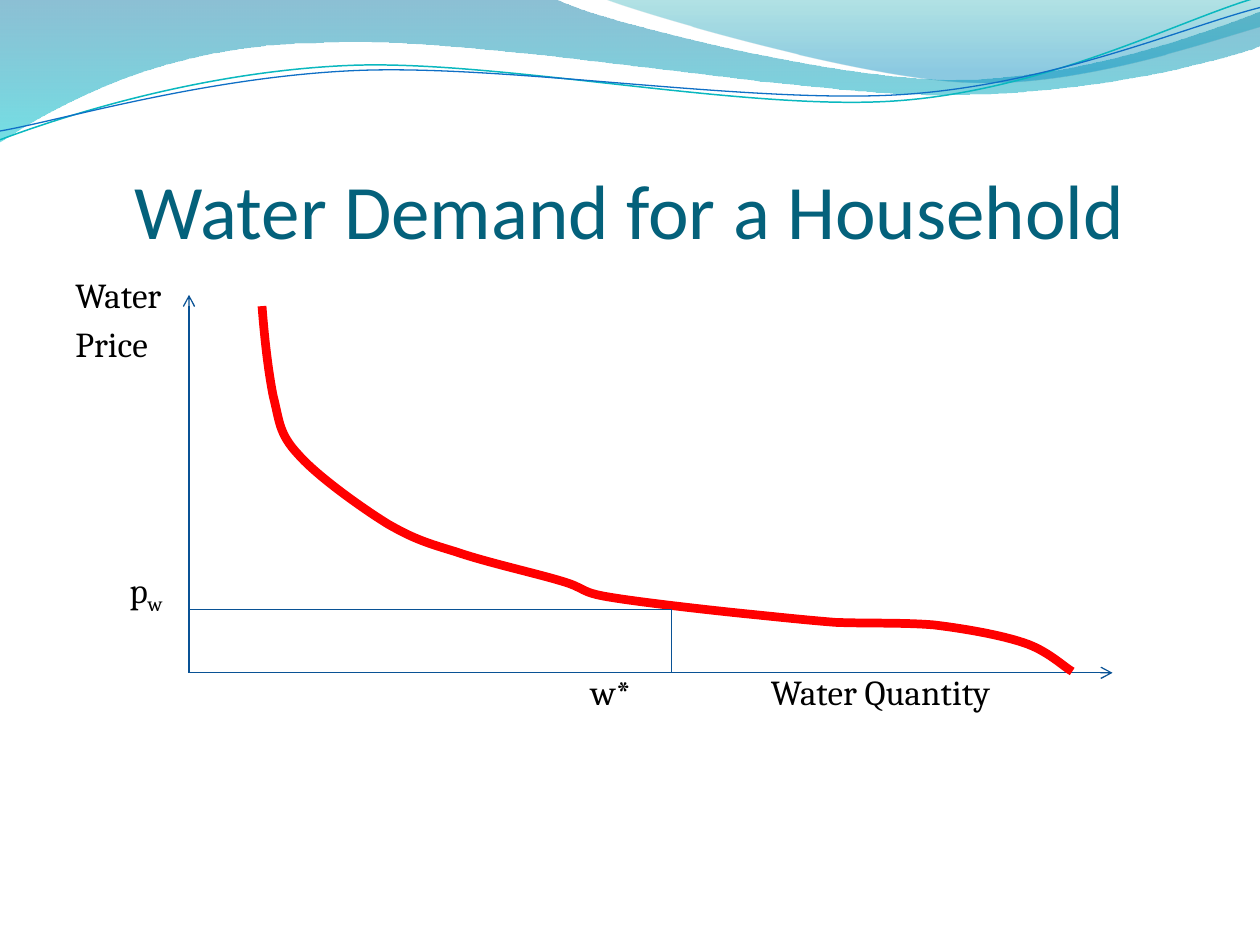
from dataclasses import dataclass

from lxml.etree import SubElement as Sub
from pptx import Presentation
from pptx.dml.color import RGBColor as RGB
from pptx.enum.shapes import MSO_CONNECTOR as CONN
from pptx.enum.text import MSO_ANCHOR as ANCHOR, PP_ALIGN as ALIGN
from pptx.oxml.ns import qn
from pptx.util import Cm, Pt


@dataclass(frozen=True)
class Theme:
    title: str = "04617B"
    text: str = "000000"
    axis: str = "095295"
    demand: str = "FF0000"
    teal_line: str = "0AB8BF"
    blue_line: str = "0F6FC6"
    wave: tuple = ((0, "0074A1", 45), (1, "00C6CF", 55))
    crest: tuple = ((0, "00A1A9", 30), (0.8, "008BBF", 45))
    title_font: str = "Calibri"
    body_font: str = "Cambria"
    title_size: int = 44
    body_size: int = 20
    thin: float = 0.75
    thick: float = 5


def inch(value):
    return Cm(value * 2.54)


class Deck:
    def __init__(self, theme):
        self.theme = theme
        self.prs = Presentation()
        self.prs.slide_width, self.prs.slide_height = Cm(25.4), Cm(19.05)
        self.s = self.prs.slides.add_slide(self.prs.slide_layouts[6])

    def text(self, box, paragraphs, title=False):
        t = self.theme
        tf = self.s.shapes.add_textbox(*map(inch, box)).text_frame
        tf.word_wrap = True
        if title:
            tf.vertical_anchor = ANCHOR.BOTTOM
            tf.margin_left = tf.margin_right = tf.margin_bottom = 0
        for i, runs in enumerate(paragraphs):
            p = tf.add_paragraph() if i else tf.paragraphs[0]
            p.alignment = ALIGN.CENTER if title else ALIGN.LEFT
            if i:
                p.space_before = Pt(t.body_size * 0.2)
            for content, baseline in runs:
                r = p.add_run()
                r.text = content
                r.font.name = t.title_font if title else t.body_font
                r.font.size = Pt(t.title_size if title else t.body_size)
                r.font.color.rgb = RGB.from_string(t.title if title else t.text)
                if baseline:
                    r.font._element.set("baseline", str(baseline * 1000))

    def outline(self, start, segments, closed=False):
        points = [(inch(x), inch(y)) for seg in segments for x, y in zip(seg[::2], seg[1::2])]
        builder = self.s.shapes.build_freeform(*map(inch, start))
        builder.add_line_segments(points, close=closed)
        sp = builder.convert_to_shape()
        sp.shadow.inherit = False
        steps = iter(list(sp._element.iter(qn("a:lnTo"))))
        for seg in segments:
            if len(seg) == 2:
                next(steps)
                continue
            curve = next(steps)
            curve.tag = qn("a:cubicBezTo")
            for _ in range(2):
                step = next(steps)
                curve.append(step[0])
                step.getparent().remove(step)
        return sp

    def curve(self, start, segments, color, width):
        sp = self.outline(start, segments)
        sp.fill.background()
        sp.line.color.rgb = RGB.from_string(color)
        sp.line.width = Pt(width)

    def wave(self, start, segments, stops):
        sp = self.outline(start, segments, closed=True)
        sp.line.fill.background()
        sp.fill.gradient()
        sp.fill.gradient_angle = 270
        for stop, (position, color, opacity) in zip(sp.fill.gradient_stops, stops):
            stop.position = position
            stop.color.rgb = RGB.from_string(color)
            clr = stop._gs.find(qn("a:srgbClr"))
            Sub(clr, qn("a:alpha"), val=str(opacity * 1000))

    def line(self, start, end, arrow=False):
        c = self.s.shapes.add_connector(CONN.STRAIGHT, *map(inch, start + end))
        c.line.color.rgb = RGB.from_string(self.theme.axis)
        c.line.width = Pt(self.theme.thin)
        if arrow:
            Sub(c.line._get_or_add_ln(), qn("a:tailEnd"), type="arrow")
        Sub(c._element.spPr, qn("a:effectLst"))


def draw_header(deck):
    t = deck.theme
    deck.wave((0, -0.01), [
        (4.4, -0.01),
        (4.76, 0.17, 6.64, 0.63, 7.58, 0.63),
        (8.53, 0.63, 9.58, 0.26, 10, 0.09),
        (10.01, 0.36),
        (9.83, 0.44, 8.7, 0.76, 7.46, 0.75),
        (6.22, 0.75, 3.82, 0.28, 2.57, 0.34),
        (1.29, 0.35, 0.46, 0.83, -0.01, 1.13),
    ], t.wave)
    deck.wave((4.79, -0.01), [
        (5.09, 0.11, 6.82, 0.62, 7.69, 0.65),
        (8.56, 0.69, 9.61, 0.32, 10, 0.21),
        (10, 0),
    ], t.crest)
    deck.curve((0, 1.11), [
        (0.48, 0.93, 1.58, 0.57, 2.77, 0.52),
        (3.95, 0.47, 5.93, 0.89, 7.13, 0.8),
        (8.33, 0.71, 9.38, 0.15, 9.98, -0.02),
    ], t.teal_line, 0.85)
    deck.curve((0, 1.04), [
        (0.47, 0.96, 1.64, 0.61, 2.83, 0.56),
        (4.03, 0.51, 5.97, 0.83, 7.17, 0.75),
        (8.36, 0.67, 9.41, 0.21, 10, 0.06),
    ], t.blue_line, t.thin)


def draw_demand(deck):
    t = deck.theme
    origin, optimum = (1.5, 5.34), (5.33, 4.84)
    deck.line(origin, (8.83, origin[1]), arrow=True)
    deck.line(origin, (origin[0], 2.34), arrow=True)
    deck.curve((2.08, 2.43), [
        (2.1, 2.69, 2.13, 2.95, 2.17, 3.15),
        (2.22, 3.34, 2.21, 3.44, 2.37, 3.61),
        (2.52, 3.78, 2.87, 4.03, 3.08, 4.16),
        (3.29, 4.28, 3.39, 4.31, 3.62, 4.38),
        (3.85, 4.46, 4.25, 4.55, 4.45, 4.61),
        (4.66, 4.67, 4.59, 4.7, 4.84, 4.74),
        (5.08, 4.78, 5.61, 4.84, 5.9, 4.87),
        (6.2, 4.9, 6.38, 4.92, 6.63, 4.94),
        (6.88, 4.95, 7.16, 4.94, 7.41, 4.96),
        (7.66, 4.99, 7.94, 5.04, 8.12, 5.1),
        (8.31, 5.16, 8.44, 5.29, 8.51, 5.33),
    ], t.demand, t.thick)
    deck.line(optimum, (origin[0], optimum[1]))
    deck.line(optimum, (optimum[0], origin[1]))


def main():
    deck = Deck(Theme())
    draw_header(deck)
    deck.text((0.5, 0.77, 9, 1.25), [[("Water Demand for a Household", 0)]], title=True)
    deck.text((0.5, 2.12, 1, 0.85), [[("Water", 0)], [("Price", 0)]])
    deck.text((0.93, 4.46, 0.6, 0.45), [[("p", 0), ("w", -25)]])
    deck.text((4.59, 5.27, 0.8, 0.45), [[("w*", 0)]])
    deck.text((6.02, 5.27, 2.4, 0.45), [[("Water Quantity", 0)]])
    draw_demand(deck)
    deck.prs.save("out.pptx")


if __name__ == "__main__":
    main()
